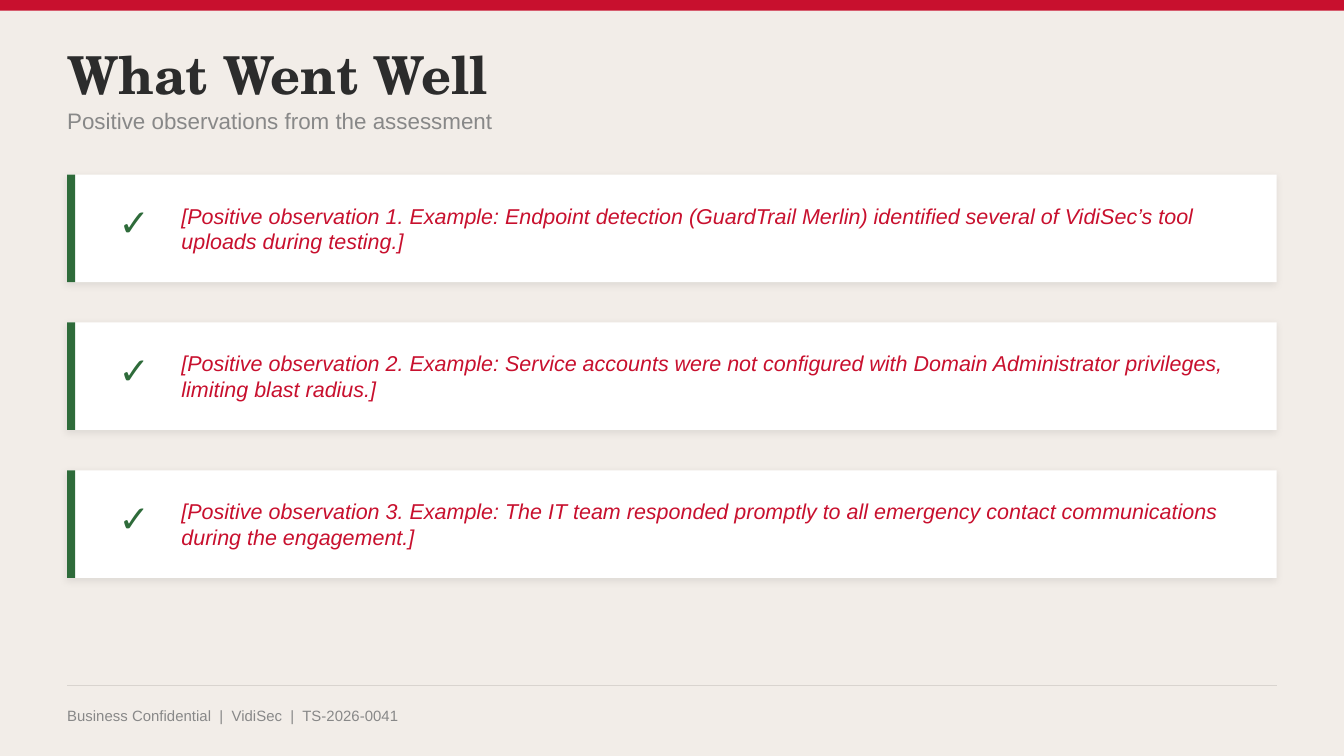
import pptx
import pptx.util
import pptx.dml.color
import pptx.enum.shapes
import pptx.enum.text
import pptx.oxml
import pptx.oxml.ns

Inches = pptx.util.Inches
Pt = pptx.util.Pt
Align = pptx.enum.text.PP_ALIGN

# Content
TITLE = "What Went Well"
SUBTITLE = "Positive observations from the assessment"
NOTES = [
    "[Positive observation 1. Example: Endpoint detection (GuardTrail Merlin) "
    "identified several of VidiSec’s tool uploads during testing.]",
    "[Positive observation 2. Example: Service accounts were not configured with "
    "Domain Administrator privileges, limiting blast radius.]",
    "[Positive observation 3. Example: The IT team responded promptly to all "
    "emergency contact communications during the engagement.]",
]
FOOTER = "Business Confidential  |  VidiSec  |  TS-2026-0041"

COLORS = {
    "paper": "F2EDE8", "red": "C8102E", "ink": "2C2C2C", "gray": "888888",
    "white": "FFFFFF", "green": "2E6B3A", "rule": "D9D4CF",
}

# Layout, in inches
LEFT, WIDTH = 0.5, 9
CARD_TOP, CARD_HEIGHT, CARD_STEP = 1.3, 0.8, 1.1
RULE_TOP = 5.1


def color(name):
    return pptx.dml.color.RGBColor.from_string(COLORS[name])


def write(slide, text, box, size, tint, font="Arial", bold=False,
          italic=False, align=Align.LEFT, right=0, shape=None):
    """Put text in a new text box, or in the given placeholder."""
    area = [Inches(n) for n in box]
    if shape is None:
        shape = slide.shapes.add_textbox(*area)
    shape.left, shape.top, shape.width, shape.height = area
    frame = shape.text_frame
    frame.text = text
    frame.word_wrap = True
    frame.auto_size = pptx.enum.text.MSO_AUTO_SIZE.NONE
    frame.vertical_anchor = pptx.enum.text.MSO_ANCHOR.MIDDLE
    frame.margin_left = frame.margin_top = frame.margin_bottom = 0
    frame.margin_right = Inches(right)
    line = frame.paragraphs[0]
    line.alignment = align
    style = line.runs[0].font
    style.name, style.size = font, Pt(size)
    style.bold, style.italic = bold, italic
    style.color.rgb = color(tint)


def block(slide, box, fill):
    shape = slide.shapes.add_shape(
        pptx.enum.shapes.MSO_SHAPE.RECTANGLE, *[Inches(n) for n in box])
    shape.fill.solid()
    shape.fill.fore_color.rgb = color(fill)
    shape.line.fill.background()
    shape.shadow.inherit = False
    return shape


def shade(shape):
    """Give a card its soft shadow."""
    effects = shape._element.spPr.find(pptx.oxml.ns.qn("a:effectLst"))
    effects.append(pptx.oxml.parse_xml(
        f'<a:outerShdw {pptx.oxml.ns.nsdecls("a")} blurRad="{Pt(4)}" '
        f'dist="{Pt(1.5)}" dir="{135 * 60000}" algn="bl" rotWithShape="0">'
        '<a:srgbClr val="000000"><a:alpha val="8000"/></a:srgbClr>'
        '</a:outerShdw>'))


def card(slide, top, note):
    shade(block(slide, (LEFT, top, WIDTH, CARD_HEIGHT), "white"))
    block(slide, (LEFT, top, 0.06, CARD_HEIGHT), "green")
    write(slide, "✓", (LEFT + 0.3, top + 0.15, 0.4, 0.4), 20, "green",
          bold=True, align=Align.CENTER)
    write(slide, note, (LEFT + 0.85, top, 7.95, CARD_HEIGHT), 11.5, "red",
          italic=True, right=0.11)


def main():
    deck = pptx.Presentation()
    # A 16:9 page
    deck.slide_width = Inches(10)
    deck.slide_height = deck.slide_width * 9 // 16
    slide = deck.slides.add_slide(deck.slide_layouts.get_by_name("Title Only"))
    slide.background.fill.solid()
    slide.background.fill.fore_color.rgb = color("paper")

    # Top band and headings
    block(slide, (0, 0, 10, 0.08), "red")
    write(slide, TITLE, (LEFT, 0.3, WIDTH, 0.5), 28, "ink",
          font="TeX Gyre Schola", bold=True, shape=slide.shapes.title)
    write(slide, SUBTITLE, (LEFT, 0.75, WIDTH, 0.3), 12, "gray")

    # Observation cards
    for i, note in enumerate(NOTES):
        card(slide, CARD_TOP + i * CARD_STEP, note)

    # Footer
    rule = slide.shapes.add_connector(
        pptx.enum.shapes.MSO_CONNECTOR.STRAIGHT, Inches(LEFT),
        Inches(RULE_TOP), Inches(LEFT + WIDTH), Inches(RULE_TOP))
    rule.line.color.rgb = color("rule")
    rule.line.width = Pt(0.5)
    rule._element.spPr.append(pptx.oxml.parse_xml(
        f'<a:effectLst {pptx.oxml.ns.nsdecls("a")}/>'))
    write(slide, FOOTER, (LEFT, RULE_TOP + 0.05, WIDTH, 0.35), 8, "gray")

    deck.save("out.pptx")


if __name__ == "__main__":
    main()
